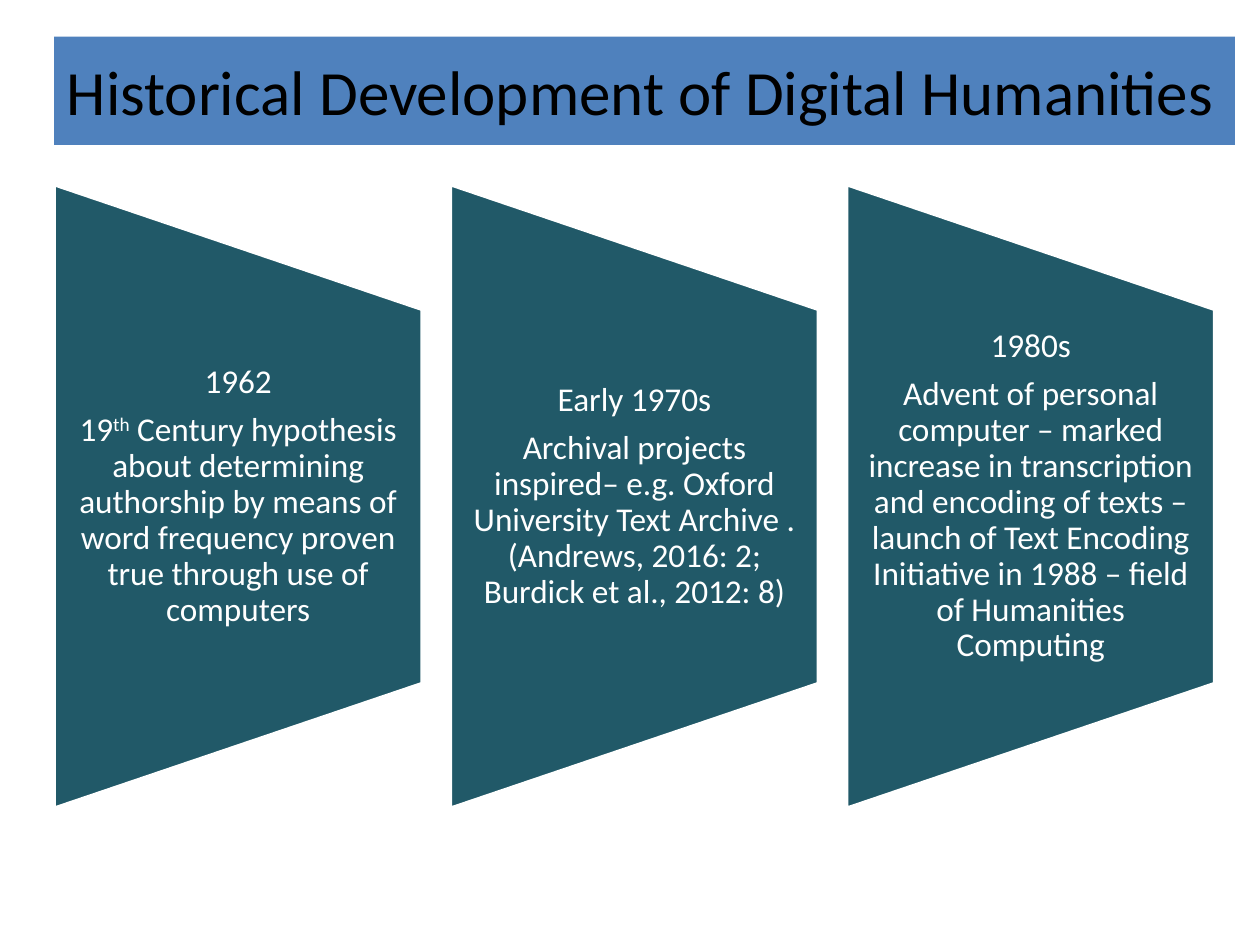
from pptx import Presentation
from pptx.dml.color import RGBColor
from pptx.enum.shapes import MSO_SHAPE as Shape
from pptx.enum.text import MSO_ANCHOR as Anchor, MSO_AUTO_SIZE as AutoSize, PP_ALIGN as Align
from pptx.util import Inches, Pt

TITLE = "Historical Development of Digital Humanities"
# Each milestone: period, then (text, superscript) pieces of its description
MILESTONES = [
    ("1962", [
        ("19", False),
        ("th", True),
        (" Century hypothesis about determining authorship by means of "
         "word frequency proven true through use of computers", False),
    ]),
    ("Early 1970s", [
        ("Archival projects inspired– e.g. Oxford University Text Archive . "
         "(Andrews, 2016: 2; Burdick et al., 2012: 8)", False),
    ]),
    ("1980s", [
        ("Advent of personal computer – marked increase in transcription and "
         "encoding of texts – launch of Text Encoding Initiative in 1988 – "
         "field of Humanities Computing", False),
    ]),
]

FONT = "Calibri"
BLUE, TEAL, WHITE, BLACK = "4F81BD", "215968", "FFFFFF", "000000"
LEFT, PITCH = 0.43, 3.145
PANEL_WIDTH, PANEL_HEIGHT, CENTER_Y = 2.92, 4.95, 3.94
LABEL_HEIGHT = 2.97


def rgb(value):
    return RGBColor.from_string(value)


def style_font(font, size, color):
    font.name = FONT
    font.size = Pt(size)
    font.color.rgb = rgb(color)


def add_title(slide):
    title = slide.shapes.title
    title.left, title.top = Inches(LEFT), Inches(0.29)
    title.width, title.height = Inches(9.37), Inches(0.86)
    title.fill.solid()
    title.fill.fore_color.rgb = rgb(BLUE)
    frame = title.text_frame
    frame.text = TITLE
    frame.vertical_anchor = Anchor.MIDDLE
    frame.auto_size = AutoSize.NONE
    heading = frame.paragraphs[0]
    heading.alignment = Align.LEFT
    style_font(heading.runs[0].font, 36, BLACK)


def add_panel(slide, left):
    """Add a trapezoid turned a quarter left, so its long side faces left."""
    center_x = left + PANEL_WIDTH / 2
    panel = slide.shapes.add_shape(
        Shape.FLOWCHART_MANUAL_OPERATION,
        Inches(center_x - PANEL_HEIGHT / 2), Inches(CENTER_Y - PANEL_WIDTH / 2),
        Inches(PANEL_HEIGHT), Inches(PANEL_WIDTH))
    panel.rotation = 270
    panel.shadow.inherit = False
    panel.fill.solid()
    panel.fill.fore_color.rgb = rgb(TEAL)
    panel.line.color.rgb = rgb(WHITE)
    panel.line.width = Pt(2)


def add_label(slide, left, period, description):
    label = slide.shapes.add_textbox(
        Inches(left), Inches(CENTER_Y - LABEL_HEIGHT / 2),
        Inches(PANEL_WIDTH), Inches(LABEL_HEIGHT))
    frame = label.text_frame
    frame.word_wrap = True
    frame.vertical_anchor = Anchor.MIDDLE
    frame.margin_left = frame.margin_right = Inches(0.13)
    frame.margin_top = frame.margin_bottom = 0
    paragraphs = [frame.paragraphs[0], frame.add_paragraph()]
    for paragraph, pieces in zip(paragraphs, [[(period, False)], description]):
        paragraph.alignment = Align.CENTER
        paragraph.line_spacing = 0.9
        paragraph.space_after = Pt(7)
        for text, superscript in pieces:
            run = paragraph.add_run()
            run.text = text
            style_font(run.font, 19, WHITE)
            if superscript:
                run.font._element.set("baseline", "30000")


def main():
    deck = Presentation()
    deck.slide_width, deck.slide_height = Inches(10), Inches(7.5)
    slide = deck.slides.add_slide(deck.slide_layouts[5])
    add_title(slide)
    for index, (period, description) in enumerate(MILESTONES):
        left = LEFT + index * PITCH
        add_panel(slide, left)
        add_label(slide, left, period, description)
    deck.save("out.pptx")


if __name__ == "__main__":
    main()
